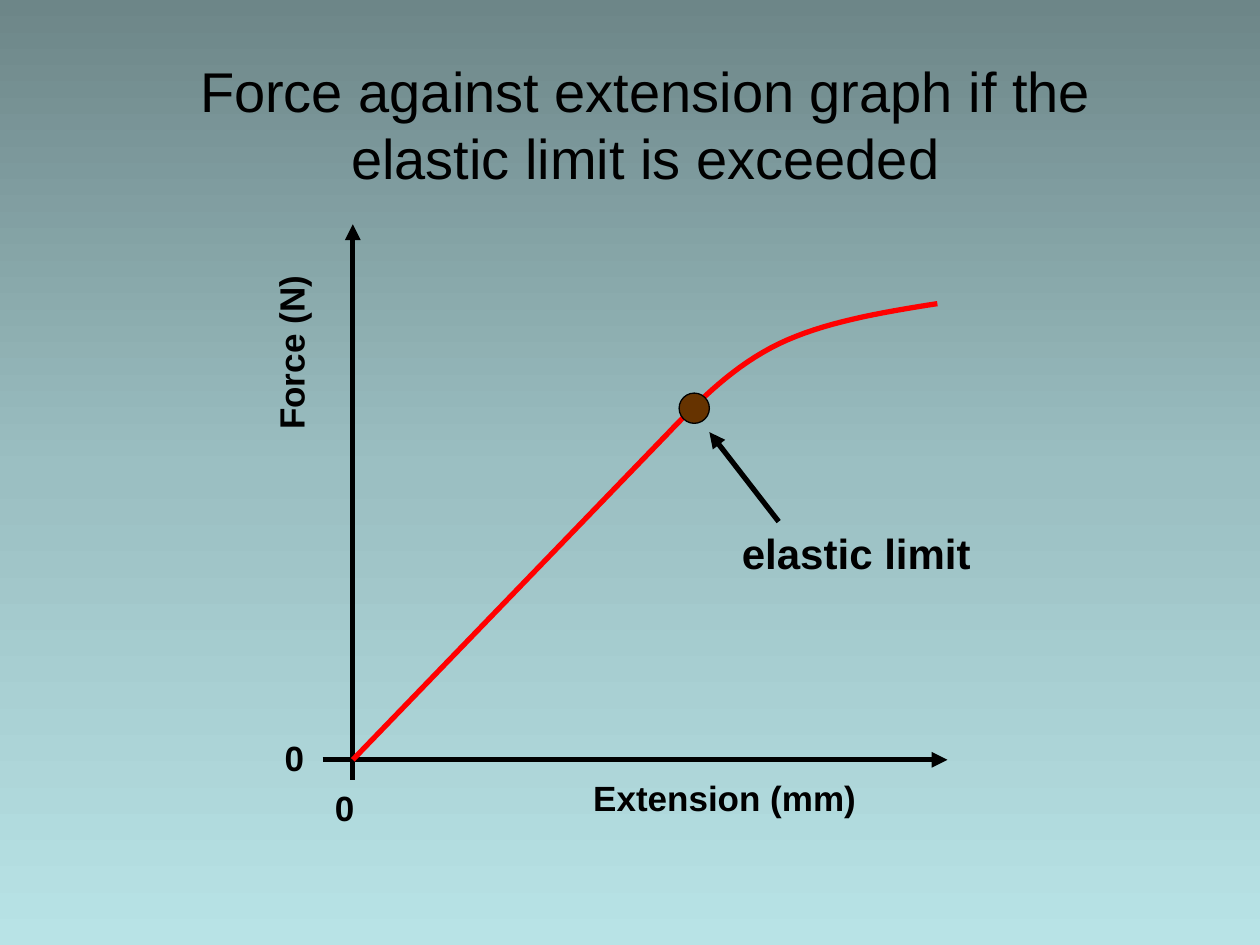
from copy import deepcopy

from lxml import etree
from pptx import Presentation
from pptx import util as u
from pptx.dml.color import RGBColor
from pptx.enum import shapes, text
from pptx.oxml.ns import qn

BLACK = RGBColor(0x00, 0x00, 0x00)
RED = RGBColor(0xFF, 0x00, 0x00)
BROWN = RGBColor(0x66, 0x33, 0x00)
BACKGROUND = [RGBColor(0x6D, 0x86, 0x88), RGBColor(0x9B, 0xBF, 0xC2), RGBColor(0xB8, 0xE3, 0xE6)]

ORIGIN = (2.8, 6.03)
CURVE = [(5.31, 3.43), (5.57, 3.16), (5.83, 2.9), (6.18, 2.73),
         (6.53, 2.56), (6.99, 2.48), (7.44, 2.41)]


def bezier(start, control_1, control_2, end, steps=16):
    """Points along one cubic segment, without its start."""
    for step in range(1, steps + 1):
        t = step / steps
        weights = ((1 - t) ** 3, 3 * t * (1 - t) ** 2, 3 * t ** 2 * (1 - t), t ** 3)
        yield tuple(sum(w * point[axis] for w, point in zip(weights, (start, control_1, control_2, end)))
                    for axis in (0, 1))


class GraphSlide:
    FONT = {"name": "Arial", "bold": True}
    LINE_WIDTH = 3

    def __init__(self, presentation):
        self.slide = presentation.slides.add_slide(presentation.slide_layouts[5])
        self.group = None

    def background(self, colours):
        """Fill the slide with evenly spaced colours from top to bottom."""
        fill = self.slide.background.fill
        fill.gradient()
        fill.gradient_angle = 270
        first_stop = self.slide.element.xpath(".//p:bg//a:gs")[0]
        for _ in colours[2:]:
            first_stop.addnext(deepcopy(first_stop))
        for index, (stop, colour) in enumerate(zip(fill.gradient_stops, colours)):
            stop.color.rgb = colour
            stop.position = index / (len(colours) - 1)

    def start_group(self):
        self.group = self.slide.shapes.add_group_shape().shapes

    def set_font(self, font, **format_values):
        for name, value in {**self.FONT, **format_values}.items():
            setattr(font, name, value)
        font.color.rgb = BLACK

    def title(self, words, left, top, width, height):
        title = self.slide.shapes.title
        box = {"left": left, "top": top, "width": width, "height": height}
        for name, value in box.items():
            setattr(title, name, u.Inches(value))
        frame = title.text_frame
        frame.text = words
        frame_format = {"auto_size": text.MSO_AUTO_SIZE.NONE, "word_wrap": True,
                        "vertical_anchor": text.MSO_ANCHOR.MIDDLE}
        for name, value in frame_format.items():
            setattr(frame, name, value)
        paragraph = frame.paragraphs[0]
        paragraph.alignment = text.PP_ALIGN.CENTER
        self.set_font(paragraph.runs[0].font, size=u.Pt(32), bold=False)

    def label(self, words, left, top, width, height=0.43, size=20, rotation=0):
        label = self.group.add_textbox(*map(u.Inches, (left, top, width, height)))
        label.rotation = rotation
        frame = label.text_frame
        frame.word_wrap = True
        frame.auto_size = text.MSO_AUTO_SIZE.SHAPE_TO_FIT_TEXT
        frame.text = words
        self.set_font(frame.paragraphs[0].runs[0].font, size=u.Pt(size))

    def line(self, start, end, colour=BLACK, arrow=False):
        line = self.group.add_connector(shapes.MSO_CONNECTOR.STRAIGHT, *map(u.Inches, (*start, *end)))
        line.line.color.rgb = colour
        line.line.width = u.Pt(self.LINE_WIDTH)
        if arrow:
            etree.SubElement(line.line._get_or_add_ln(), qn("a:tailEnd"), type="triangle")
        etree.SubElement(line._element.spPr, qn("a:effectLst"))

    def curve(self, points, colour):
        """Draw joined cubic segments; each shares its end with the next start."""
        outline = [point for i in range(0, len(points) - 1, 3) for point in bezier(*points[i:i + 4])]
        builder = self.group.build_freeform(*map(u.Inches, points[0]))
        builder.add_line_segments([tuple(map(u.Inches, point)) for point in outline], close=False)
        curve = builder.convert_to_shape()
        curve.shadow.inherit = False
        curve.fill.background()
        curve.line.color.rgb = colour
        curve.line.width = u.Pt(self.LINE_WIDTH)

    def dot(self, left, top, diameter, colour):
        dot = self.group.add_shape(shapes.MSO_SHAPE.OVAL, *map(u.Inches, (left, top, diameter, diameter)))
        dot.shadow.inherit = False
        dot.fill.solid()
        dot.fill.fore_color.rgb = colour
        dot.line.color.rgb = BLACK
        dot.line.width = u.Pt(0.75)


def main():
    presentation = Presentation()
    presentation.slide_width = u.Inches(10)
    presentation.slide_height = u.Inches(7.5)

    graph = GraphSlide(presentation)
    graph.background(BACKGROUND)
    graph.title("Force against extension graph if the elastic limit is exceeded", 1.22, 0.28, 7.81, 1.4)

    origin_x, origin_y = ORIGIN
    graph.start_group()
    graph.line((origin_x, 6.19), (origin_x, 1.78), arrow=True)
    graph.line((2.56, origin_y), (7.52, origin_y), arrow=True)
    graph.label("0", 2.56, 6.19, 0.55)
    graph.label("Force (N)", 1.52, 2.51, 1.57, rotation=270)
    graph.label("0", 2.16, 5.8, 0.55)
    graph.label("Extension (mm)", 4.61, 6.11, 2.44)

    graph.start_group()
    graph.line(ORIGIN, CURVE[0], RED)
    graph.curve(CURVE, RED)

    graph.start_group()
    graph.dot(5.39, 3.12, 0.24, BROWN)
    graph.label("elastic limit", 5.79, 4.14, 2.2, 0.5, size=24)
    graph.line((6.18, 4.14), (5.63, 3.43), arrow=True)

    presentation.save("out.pptx")


if __name__ == "__main__":
    main()
